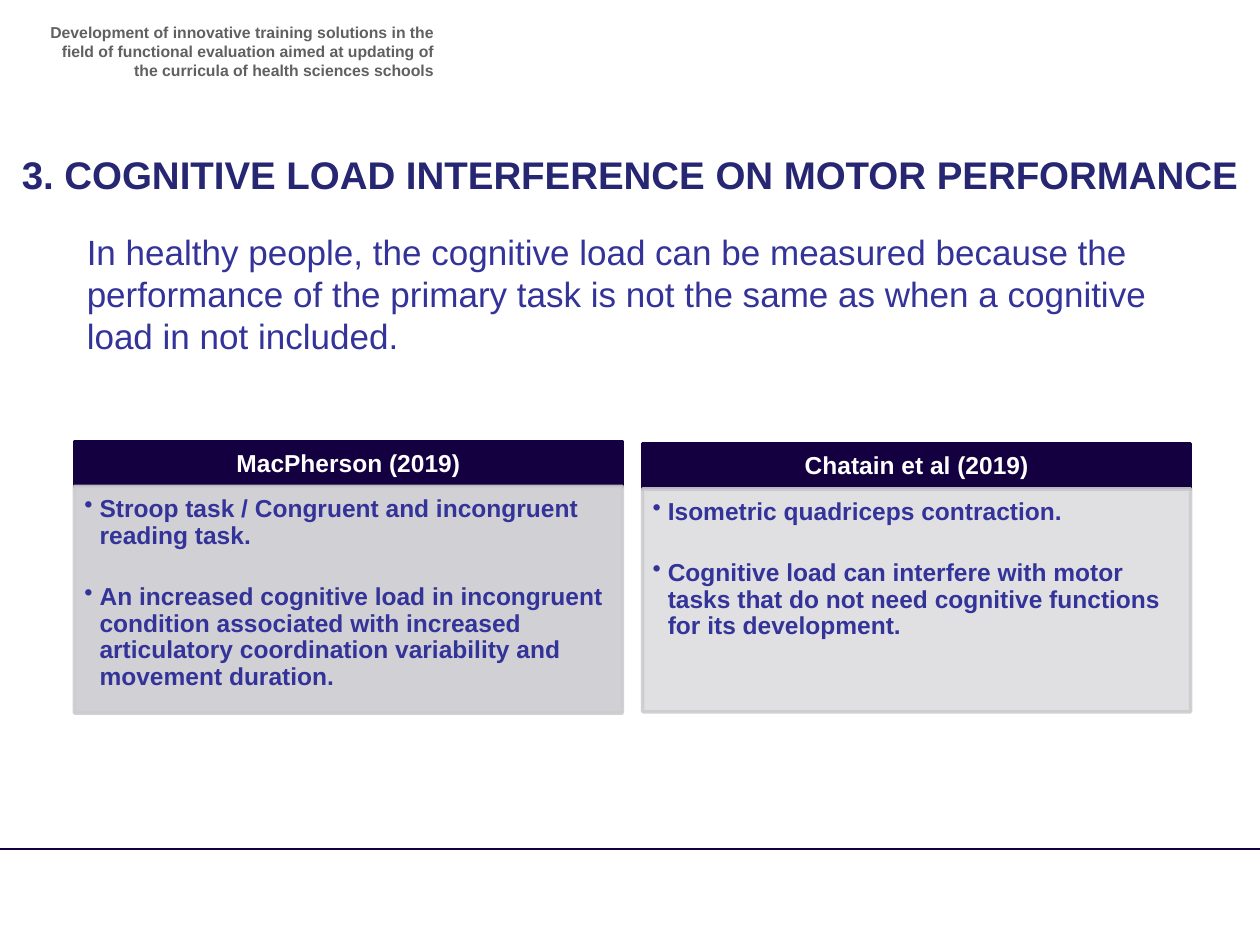
from lxml import etree
from pptx import Presentation
from pptx.dml.color import RGBColor
from pptx.enum.shapes import MSO_CONNECTOR, MSO_SHAPE
from pptx.enum.text import MSO_ANCHOR, PP_ALIGN
from pptx.oxml.ns import qn
from pptx.util import Inches, Pt


def color(value):
    return RGBColor.from_string(value)


def write(shape, paragraphs, size, font_color, bold, align, insets=(0.1, 0.05, 0.1, 0.05)):
    """Fill a shape with evenly formatted paragraphs."""
    frame = shape.text_frame
    frame.word_wrap = True
    frame.margin_left, frame.margin_top, frame.margin_right, frame.margin_bottom = map(Inches, insets)
    frame.text = "\n".join(paragraphs)
    for paragraph in frame.paragraphs:
        paragraph.alignment = align
        for run in paragraph.runs:
            run.font.name = "Arial"
            run.font.size = Pt(size)
            run.font.bold = bold
            run.font.color.rgb = color(font_color)
    return frame


presentation = Presentation()
presentation.slide_width = Inches(10)
presentation.slide_height = Inches(7.5)
slide = presentation.slides.add_slide(presentation.slide_layouts[6])

# Footer rule
rule = slide.shapes.add_connector(
    MSO_CONNECTOR.STRAIGHT, Inches(-0.05), Inches(6.74), Inches(10), Inches(6.74))
rule.line.color.rgb = color("140041")
rule.line.width = Pt(1)
etree.SubElement(rule._element.spPr, qn("a:effectLst"))

# Project name, title and introduction
texts = [
    ((0.28, 0.13, 3.26, 0.47), 9, "606060", True, PP_ALIGN.RIGHT,
     "Development of innovative training solutions in the ﬁeld of functional evaluation "
     "aimed at updating of the curricula of health sciences schools"),
    ((-0.13, 1.15, 10.26, 0.47), 22, "262673", True, PP_ALIGN.CENTER,
     "3. COGNITIVE LOAD INTERFERENCE ON MOTOR PERFORMANCE"),
    ((0.59, 1.78, 9.02, 1.11), 20, "333399", False, PP_ALIGN.LEFT,
     "In healthy people, the cognitive load can be measured because the performance of the "
     "primary task is not the same as when a cognitive load in not included."),
]
for box, size, font_color, bold, align, text in texts:
    write(slide.shapes.add_textbox(*map(Inches, box)), [text], size, font_color, bold, align)

# Study cards: left, header top, body top, body height, body fill, body opacity, wording
cards = [
    (0.59, 3.51, 3.86, 1.8, "D1D0D4", 100, "MacPherson (2019)",
     ["Stroop task / Congruent and incongruent reading task.",
      "An increased cognitive load in incongruent condition associated with increased "
      "articulatory coordination variability and movement duration."]),
    (5.1, 3.52, 3.88, 1.77, "DDDDDF", 90, "Chatain et al (2019)",
     ["Isometric quadriceps contraction.",
      "Cognitive load can interfere with motor tasks that do not need cognitive functions "
      "for its development."]),
]
for left, header_top, body_top, body_height, body_fill, opacity, study, findings in cards:
    parts = [(header_top, 0.36, "140041", "140041", 100, 100),
             (body_top, body_height, body_fill, "CCCCCF", opacity, 90)]
    rectangles = []
    for top, height, fill_color, line_color, fill_opacity, line_opacity in parts:
        shape = slide.shapes.add_shape(
            MSO_SHAPE.RECTANGLE, Inches(left), Inches(top), Inches(4.35), Inches(height))
        shape.shadow.inherit = False
        shape.fill.solid()
        shape.fill.fore_color.rgb = color(fill_color)
        shape.line.color.rgb = color(line_color)
        shape.line.width = Pt(2)
        # Fill colour comes first in the shape properties, line colour second
        for element, percent in zip(shape._element.spPr.iter(qn("a:srgbClr")),
                                    (fill_opacity, line_opacity)):
            if percent < 100:
                etree.SubElement(element, qn("a:alpha"), val=str(percent * 1000))
        rectangles.append(shape)
    header, body = rectangles

    frame = write(header, [study], 14, "FFFFFF", True, PP_ALIGN.CENTER, (0.11, 0.06, 0.11, 0.06))
    frame.vertical_anchor = MSO_ANCHOR.MIDDLE
    frame.paragraphs[0].line_spacing = 0.9

    # Bulleted findings
    frame = write(body, findings, 14, "333399", True, PP_ALIGN.LEFT, (0.08, 0.08, 0.11, 0.12))
    frame.vertical_anchor = MSO_ANCHOR.TOP
    for index, paragraph in enumerate(frame.paragraphs):
        paragraph.line_spacing = 0.9
        if index:
            paragraph.space_before = Pt(20)
        properties = paragraph._p.get_or_add_pPr()
        properties.set("marL", str(Inches(0.12)))
        properties.set("indent", str(Inches(-0.12)))
        etree.SubElement(properties, qn("a:buChar"), char="•")

presentation.save("out.pptx")
